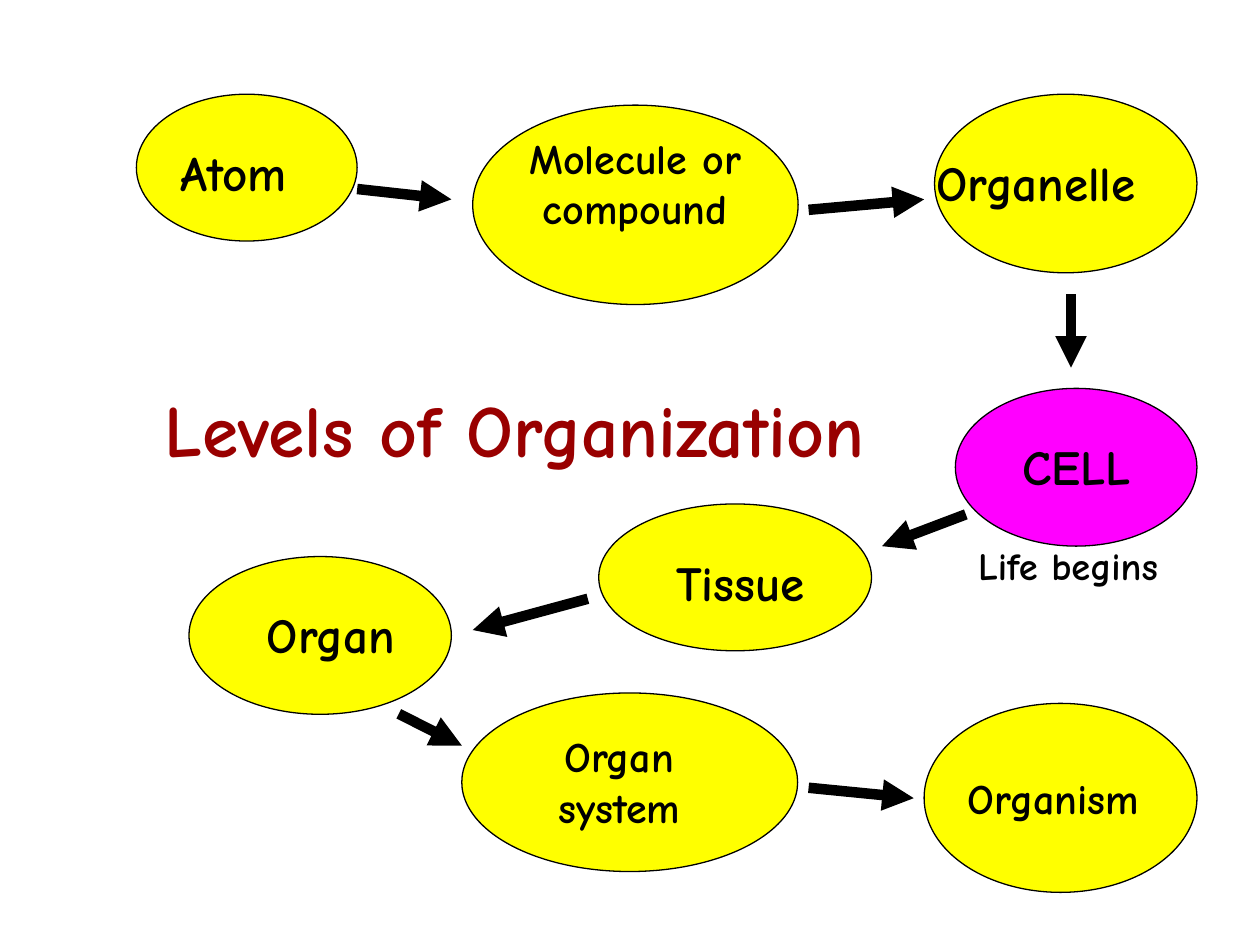
from lxml import etree
from pptx import Presentation
from pptx.dml.color import RGBColor
from pptx.enum.shapes import MSO_CONNECTOR, MSO_SHAPE
from pptx.enum.text import PP_ALIGN
from pptx.oxml.ns import qn
from pptx.util import Cm, Pt

OVAL = MSO_SHAPE.OVAL
STRAIGHT = MSO_CONNECTOR.STRAIGHT
LEFT, CENTER = PP_ALIGN.LEFT, PP_ALIGN.CENTER

FONT = "Comic Neue"
BLACK, YELLOW, MAGENTA, DARK_RED = "000000", "FFFF00", "FF00FF", "990000"

# Levels in order: fill, oval (left, top, width, height in cm),
# label, label box in cm, size in points, alignment
LEVELS = [
    (YELLOW, (2.75, 1.9, 4.45, 2.96), "Atom", (3.39, 2.75, 3.18, 1.45), 28, LEFT),
    (YELLOW, (9.53, 2.12, 6.56, 4.02), "Molecule or compound",
     (10.37, 2.54, 4.87, 3.3), 24, CENTER),
    (YELLOW, (18.84, 1.9, 5.29, 3.6), "Organelle", (18.63, 2.96, 5.29, 1.45), 28, LEFT),
    (MAGENTA, (19.26, 7.83, 4.87, 3.18), "CELL", (20.11, 8.68, 3.18, 1.45), 28, CENTER),
    (YELLOW, (12.07, 10.16, 5.5, 2.96), "Tissue", (12.7, 11.01, 4.45, 1.45), 28, CENTER),
    (YELLOW, (3.81, 11.22, 5.29, 3.18), "Organ", (4.87, 12.07, 3.6, 1.45), 28, CENTER),
    (YELLOW, (9.31, 13.97, 6.77, 3.6), "Organ system",
     (10.58, 14.61, 3.81, 2.29), 24, CENTER),
    (YELLOW, (18.63, 14.18, 5.5, 3.81), "Organism", (19.26, 15.45, 4.66, 1.27), 24, LEFT),
]

# Arrows between successive levels: x1, y1, x2, y2 in cm
ARROWS = [
    (7.2, 3.81, 9.1, 4.02),
    (16.3, 4.23, 18.63, 4.02),
    (21.59, 5.93, 21.59, 7.41),
    (19.47, 10.37, 17.78, 11.01),
    (11.85, 12.07, 9.53, 12.7),
    (8.04, 14.39, 9.31, 15.03),
    (16.3, 15.88, 18.42, 16.09),
]

TITLE = ("Levels of Organization", (1.69, 7.62, 17.36, 2.03), 42, CENTER, DARK_RED)
NOTE = ("Life begins", (19.47, 10.8, 4.87, 1.19), 22, LEFT, BLACK)


def rgb(color):
    return RGBColor.from_string(color)


def add_oval(s, box, fill):
    sp = s.shapes.add_shape(OVAL, *map(Cm, box))
    sp.shadow.inherit = False
    sp.fill.solid()
    sp.fill.fore_color.rgb = rgb(fill)
    sp.line.color.rgb = rgb(BLACK)
    sp.line.width = Pt(0.75)


def add_label(s, text, box, size, align, color=BLACK):
    tf = s.shapes.add_textbox(*map(Cm, box)).text_frame
    tf.word_wrap = True
    tf.text = text
    p = tf.paragraphs[0]
    p.alignment = align
    font = p.runs[0].font
    font.name, font.size, font.bold = FONT, Pt(size), True
    font.color.rgb = rgb(color)


def add_arrow(s, ends):
    line = s.shapes.add_connector(STRAIGHT, *map(Cm, ends))
    line.line.color.rgb = rgb(BLACK)
    line.line.width = Pt(6)
    sp_pr = line._element.spPr
    etree.SubElement(sp_pr.find(qn("a:ln")), qn("a:tailEnd"), type="triangle")
    etree.SubElement(sp_pr, qn("a:effectLst"))


def main():
    prs = Presentation()
    prs.slide_width, prs.slide_height = Cm(25.4), Cm(19.05)
    s = prs.slides.add_slide(prs.slide_layouts[6])

    # Ovals with their labels
    for fill, oval, *label in LEVELS:
        add_oval(s, oval, fill)
        add_label(s, *label)

    # Arrows along the chain
    for ends in ARROWS:
        add_arrow(s, ends)

    # Title and the remark under the cell
    for label in (TITLE, NOTE):
        add_label(s, *label)

    prs.save("out.pptx")


if __name__ == "__main__":
    main()
